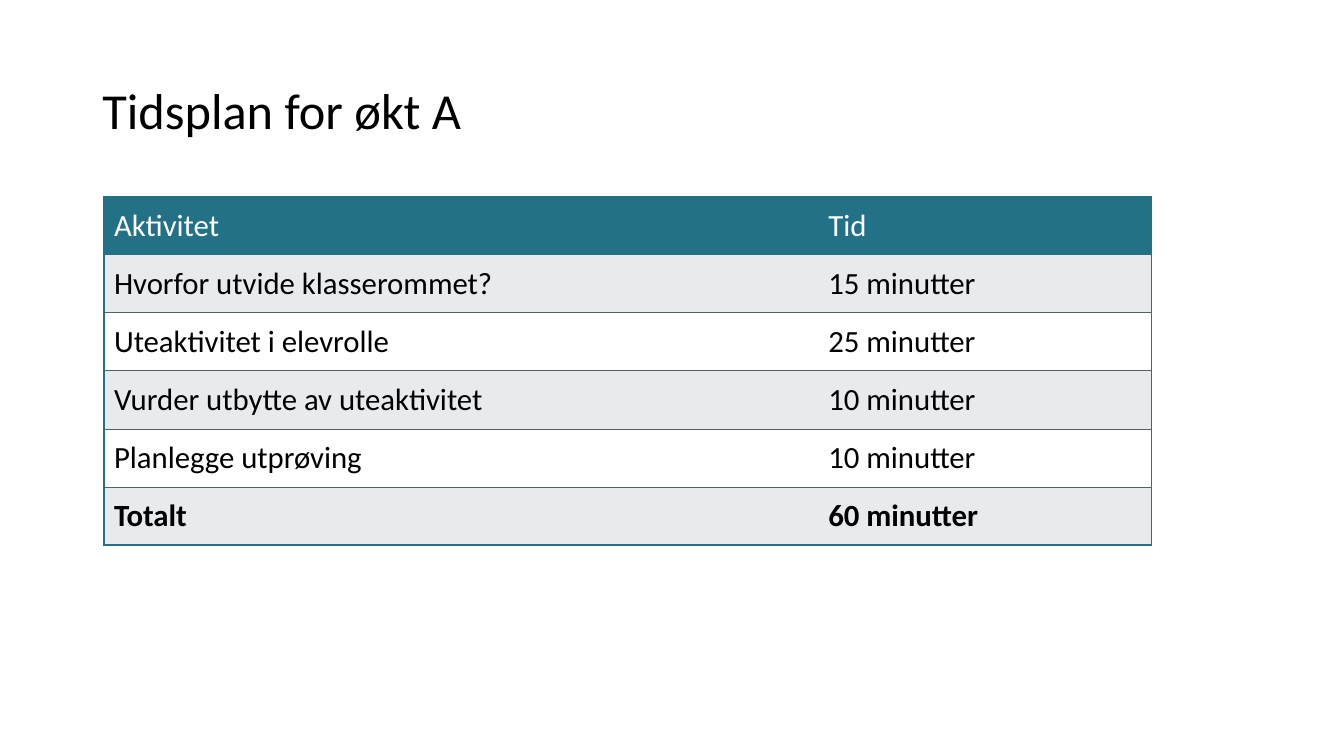
from lxml import etree
from pptx import Presentation
from pptx.dml.color import RGBColor
from pptx.enum.text import MSO_ANCHOR
from pptx.oxml.ns import qn
from pptx.util import Cm, Pt

MIDDLE = MSO_ANCHOR.MIDDLE
FONT = "Calibri"
TEAL, STRIPE, WHITE, BLACK, RULE = "227186", "E8EBED", "FFFFFF", "000000", "565F63"

SCHEDULE = [
    ("Aktivitet", "Tid"),
    ("Hvorfor utvide klasserommet?", "15 minutter"),
    ("Uteaktivitet i elevrolle", "25 minutter"),
    ("Vurder utbytte av uteaktivitet", "10 minutter"),
    ("Planlegge utprøving", "10 minutter"),
    ("Totalt", "60 minutter"),
]


def rgb(value):
    return RGBColor.from_string(value)


def add_run(paragraph, text, size, color, bold=False):
    run = paragraph.add_run()
    run.text = text
    run.font.name = FONT
    run.font.size = Pt(size)
    run.font.bold = bold
    run.font.color.rgb = rgb(color)


def add_border(cell, side, color, width):
    properties = cell._tc.get_or_add_tcPr()
    line = etree.SubElement(properties, qn(f"a:ln{side}"), w=str(Pt(width)))
    if color is None:
        etree.SubElement(line, qn("a:noFill"))
    else:
        fill = etree.SubElement(line, qn("a:solidFill"))
        etree.SubElement(fill, qn("a:srgbClr"), val=color)


def add_title(slide, left, top, width, height):
    title = slide.shapes.add_textbox(left, top, width, height).text_frame
    title.word_wrap = True
    title.vertical_anchor = MIDDLE
    heading = title.paragraphs[0]
    heading.line_spacing = 0.9
    add_run(heading, "Tidsplan for økt A", 36, BLACK)


def cell_borders(row, column):
    """Teal around the outside and header, thin rules between the activities."""
    last_row = len(SCHEDULE) - 1
    outer, rule, none = (TEAL, 1), (RULE, 0.5), (None, 0)
    return {
        "L": outer if column == 0 else none,
        "R": none if column == 0 else outer if row == 0 else rule,
        "T": outer if row <= 1 else rule,
        "B": outer if row in (0, last_row) else rule,
    }


def add_schedule(slide, left, top, width, height):
    table = slide.shapes.add_table(
        len(SCHEDULE), 2, left, top, width, height).table
    activity_width = Cm(18)
    table.columns[0].width = activity_width
    table.columns[1].width = width - activity_width

    for row, entries in enumerate(SCHEDULE):
        header, total = row == 0, row == len(SCHEDULE) - 1
        background = TEAL if header else STRIPE if row % 2 else WHITE
        for column, text in enumerate(entries):
            cell = table.cell(row, column)
            cell.vertical_anchor = MIDDLE
            for side, (color, line_width) in cell_borders(row, column).items():
                add_border(cell, side, color, line_width)
            cell.fill.solid()
            cell.fill.fore_color.rgb = rgb(background)
            add_run(cell.text_frame.paragraphs[0], text, 22,
                    WHITE if header else BLACK, bold=total)


def main():
    presentation = Presentation()
    presentation.slide_width = Cm(33.87)
    presentation.slide_height = Cm(19.05)
    slide = presentation.slides.add_slide(presentation.slide_layouts[6])

    # Heading
    add_title(slide, Cm(2.33), Cm(1.02), Cm(29.21), Cm(3.68))
    # Timetable
    add_schedule(slide, Cm(2.62), Cm(4.95), Cm(26.4), Cm(8.79))

    presentation.save("out.pptx")


if __name__ == "__main__":
    main()
